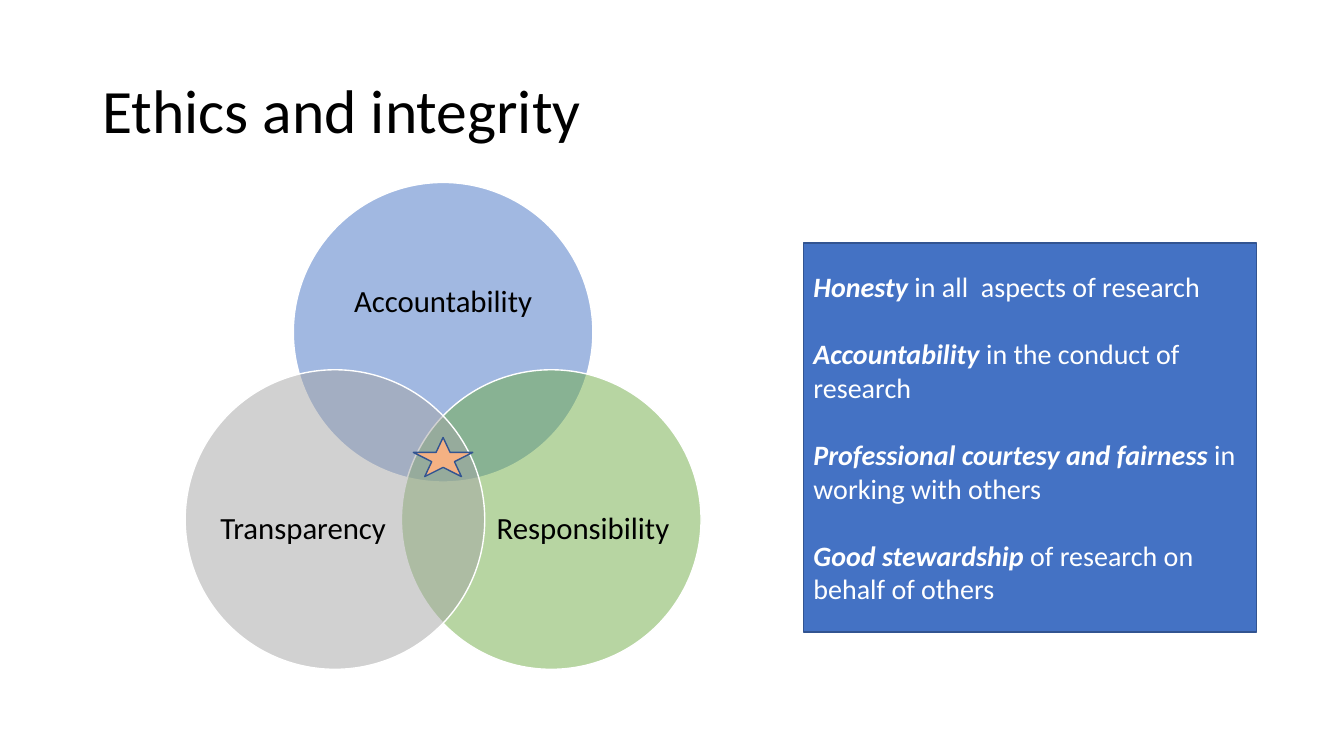
"""Build the ethics and integrity slide: a three-circle diagram beside a panel of principles."""
from dataclasses import dataclass
from math import cos, radians, sin

from lxml.etree import SubElement
from pptx import Presentation
from pptx.dml.color import RGBColor as RGB
from pptx.enum.shapes import MSO_SHAPE as SHAPE
from pptx.enum.text import MSO_ANCHOR as ANCHOR, PP_ALIGN as ALIGN
from pptx.oxml.ns import qn
from pptx.util import Pt

TITLE = "Ethics and integrity"
VALUES = [
    {"label": "Accountability", "color": "4472C4", "angle": -90, "shift": (0, -21), "size": (157, 97)},
    {"label": "Responsibility", "color": "70AD47", "angle": 30, "shift": (22.7, 7), "size": (128, 117)},
    {"label": "Transparency", "color": "A5A5A5", "angle": 150, "shift": (-22.7, 7), "size": (128, 117)},
]
PRINCIPLES = [
    ("Honesty ", "in all  aspects of research"),
    ("Accountability ", "in the conduct of research"),
    ("Professional courtesy and fairness ", "in working with others"),
    ("Good stewardship ", "of research on behalf of others"),
]


@dataclass(frozen=True)
class Theme:
    """Colours, font and type sizes of the slide."""
    font: str = "Calibri"
    text: str = "000000"
    light: str = "FFFFFF"
    panel: str = "4472C4"
    outline: str = "325491"
    star: str = "F4B183"
    title_size: int = 44
    label_size: int = 22
    panel_size: int = 20


THEME = Theme()
CENTER = (316.5, 326.5)
ORBIT = 89.2
DIAMETER = 214
STAR_CENTER = (316.5, 326.5)
STAR_SIZE = (42.5, 28)


def centered(center, size):
    """Return left, top, width and height of a box around a centre."""
    (x, y), (width, height) = center, size
    return [Pt(v) for v in (x - width / 2, y - height / 2, width, height)]


def style(paragraph, size, color):
    """Set font, size and colour of a paragraph."""
    paragraph.font.name = THEME.font
    paragraph.font.size = Pt(size)
    paragraph.font.color.rgb = RGB.from_string(color)


def add_figure(slide, preset, box, fill, line, opacity=100):
    """Add a filled, outlined preset shape."""
    figure = slide.shapes.add_shape(preset, *box)
    figure.shadow.inherit = False
    figure.fill.solid()
    figure.fill.fore_color.rgb = RGB.from_string(fill)
    figure.line.color.rgb = RGB.from_string(line)
    figure.line.width = Pt(1)
    if opacity < 100:
        color = figure.fill._xPr.find(qn("a:solidFill"))[0]
        SubElement(color, qn("a:alpha")).set("val", str(opacity * 1000))
    return figure


def add_title(slide):
    """Fill and place the title."""
    title = slide.shapes.title
    title.left, title.top, title.width, title.height = Pt(66), Pt(28.8), Pt(828), Pt(104.4)
    title.text_frame.text = TITLE
    title.text_frame.vertical_anchor = ANCHOR.MIDDLE
    heading = title.text_frame.paragraphs[0]
    heading.alignment = ALIGN.LEFT
    heading.line_spacing = 0.9
    style(heading, THEME.title_size, THEME.text)


def add_value(slide, value):
    """Add one circle of the diagram and its label."""
    angle = radians(value["angle"])
    x, y = CENTER[0] + ORBIT * cos(angle), CENTER[1] + ORBIT * sin(angle)
    add_figure(slide, SHAPE.OVAL, centered((x, y), (DIAMETER, DIAMETER)),
               value["color"], THEME.light, 50)
    dx, dy = value["shift"]
    label = slide.shapes.add_textbox(*centered((x + dx, y + dy), value["size"])).text_frame
    label.word_wrap = True
    label.vertical_anchor = ANCHOR.MIDDLE
    label.margin_left = label.margin_right = label.margin_top = label.margin_bottom = 0
    label.text = value["label"]
    caption = label.paragraphs[0]
    caption.alignment = ALIGN.CENTER
    caption.line_spacing = 0.9
    style(caption, THEME.label_size, THEME.text)


def add_principles(slide):
    """Add the panel that lists the principles."""
    box = [Pt(v) for v in (574, 173.5, 323.5, 278)]
    panel = add_figure(slide, SHAPE.RECTANGLE, box, THEME.panel, THEME.outline).text_frame
    panel.word_wrap = True
    panel.vertical_anchor = ANCHOR.MIDDLE
    for index, (principle, scope) in enumerate(PRINCIPLES):
        entry = panel.add_paragraph() if index else panel.paragraphs[0]
        entry.alignment = ALIGN.LEFT
        entry.space_before = Pt(24 if index else 0)
        style(entry, THEME.panel_size, THEME.light)
        lead = entry.add_run()
        lead.text = principle
        lead.font.bold = lead.font.italic = True
        entry.add_run().text = scope


def main():
    """Build and save the slide."""
    deck = Presentation()
    deck.slide_width, deck.slide_height = Pt(960), Pt(540)
    slide = deck.slides.add_slide(deck.slide_layouts.get_by_name("Title Only"))
    for value in VALUES:
        add_value(slide, value)
    add_principles(slide)
    add_title(slide)
    add_figure(slide, SHAPE.STAR_5_POINT, centered(STAR_CENTER, STAR_SIZE),
               THEME.star, THEME.outline)
    deck.save("out.pptx")


if __name__ == "__main__":
    main()
